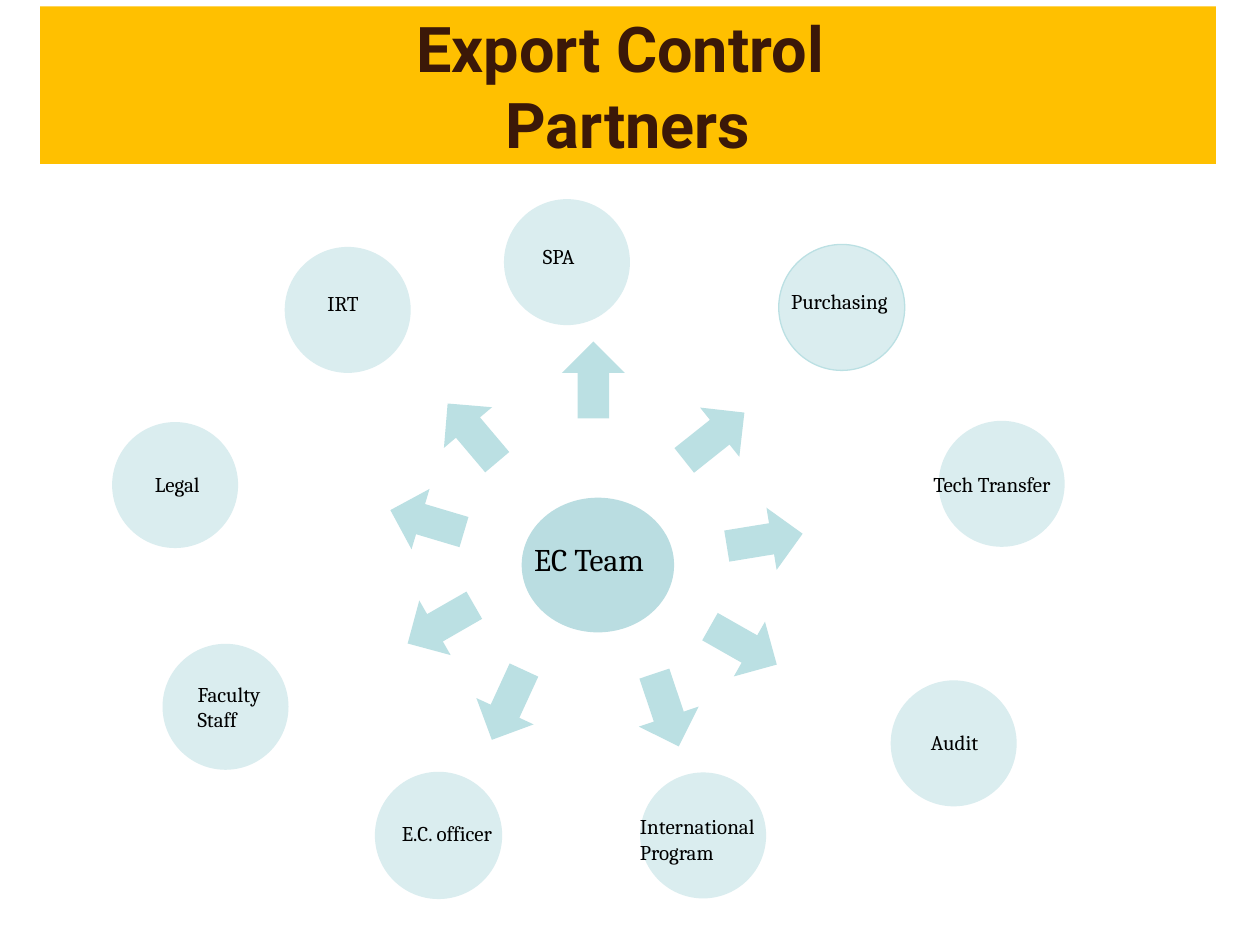
from dataclasses import dataclass

from pptx import Presentation
from pptx.dml.color import RGBColor
from pptx.enum.shapes import MSO_SHAPE
from pptx.enum.text import MSO_ANCHOR, MSO_AUTO_SIZE, PP_ALIGN
from pptx.shapes.autoshape import Shape
from pptx.slide import Slide
from pptx.util import Pt

RECTANGLE = MSO_SHAPE.RECTANGLE
ELLIPSE = MSO_SHAPE.OVAL
UP_ARROW = MSO_SHAPE.UP_ARROW
MIDDLE = MSO_ANCHOR.MIDDLE
CENTER = PP_ALIGN.CENTER
GROW_SHAPE = MSO_AUTO_SIZE.SHAPE_TO_FIT_TEXT

GOLD = "FFC000"
BROWN = "3B1808"
BLACK = "000000"
PALE_TEAL = "DAEDEF"
TEAL = "BBE0E3"
TEAM_TEAL = "BADDE1"

PARTNER_SIZE = 72
ARROW_WIDTH = 36
ARROW_HEIGHT = 43.9


@dataclass
class Box:
    left: float
    top: float
    width: float
    height: float


@dataclass
class Label:
    text: str
    box: Box
    size: float = 12


@dataclass
class Partner:
    left: float
    top: float
    label: Label
    line: str | None = None


@dataclass
class Arrow:
    left: float
    top: float
    rotation: float


PARTNERS = [
    Partner(288, 113.8, Label("SPA", Box(303.1, 135.4, 61.9, 21.6))),
    Partner(445, 139.7, Label("Purchasing", Box(445, 161.3, 86.4, 21.6)), TEAL),
    Partner(536.4, 240.5, Label("Tech Transfer", Box(526.3, 265.7, 110.2, 21.6))),
    Partner(509, 388.8, Label("Audit", Box(524.9, 413.3, 54.7, 21.6))),
    Partner(365.8, 441.4, Label("International\nProgram", Box(358.6, 461.5, 92.2, 51.1))),
    Partner(214.6, 441.4, Label("E.C. officer", Box(222.5, 465.1, 92.2, 21.6)), PALE_TEAL),
    Partner(92.9, 367.9, Label("Faculty\nStaff", Box(105.8, 385.9, 92.2, 36))),
    Partner(64.1, 241.2, Label("Legal", Box(81.4, 265.7, 61.9, 21.6))),
    Partner(162.7, 141.1, Label("IRT", Box(180, 162.7, 49.7, 21.6))),
]

ARROWS = [
    Arrow(321.1, 195.1, 0),
    Arrow(390.2, 227.5, 51.5),
    Arrow(419, 286.6, 80.7),
    Arrow(406.8, 347, 119.6),
    Arrow(362.9, 383.8, 161.5),
    Arrow(272.2, 380.9, 204.7),
    Arrow(234, 334.8, 240.1),
    Arrow(226.1, 275.8, 286.6),
    Arrow(252, 225.4, 319.8),
]


def color(hex_value: str) -> RGBColor:
    return RGBColor.from_string(hex_value)


def add_filled_shape(
    slide: Slide, kind: MSO_SHAPE, box: Box, fill: str, line: str | None = None
) -> Shape:
    shape = slide.shapes.add_shape(
        kind, Pt(box.left), Pt(box.top), Pt(box.width), Pt(box.height)
    )
    shape.shadow.inherit = False
    shape.fill.solid()
    shape.fill.fore_color.rgb = color(fill)
    if line:
        shape.line.color.rgb = color(line)
        shape.line.width = Pt(0.75)
    else:
        shape.line.fill.background()
    return shape


def add_title(slide: Slide, text: str) -> None:
    shape = add_filled_shape(slide, RECTANGLE, Box(23, 3.6, 671.8, 90), GOLD)
    frame = shape.text_frame
    frame.margin_left = frame.margin_right = Pt(0)
    frame.margin_top = frame.margin_bottom = Pt(0)
    frame.vertical_anchor = MIDDLE
    paragraph = frame.paragraphs[0]
    paragraph.text = text
    paragraph.alignment = CENTER
    paragraph.font.name = "Roboto"
    paragraph.font.size = Pt(36)
    paragraph.font.bold = True
    paragraph.font.color.rgb = color(BROWN)


def add_label(slide: Slide, label: Label) -> None:
    box = label.box
    text_box = slide.shapes.add_textbox(
        Pt(box.left), Pt(box.top), Pt(box.width), Pt(box.height)
    )
    frame = text_box.text_frame
    frame.word_wrap = True
    frame.auto_size = GROW_SHAPE
    frame.text = label.text
    for paragraph in frame.paragraphs:
        paragraph.font.name = "Cambria"
        paragraph.font.size = Pt(label.size)
        paragraph.font.color.rgb = color(BLACK)


def add_partner(slide: Slide, partner: Partner) -> None:
    box = Box(partner.left, partner.top, PARTNER_SIZE, PARTNER_SIZE)
    add_filled_shape(slide, ELLIPSE, box, PALE_TEAL, partner.line)
    add_label(slide, partner.label)


def add_arrow(slide: Slide, arrow: Arrow) -> None:
    box = Box(arrow.left, arrow.top, ARROW_WIDTH, ARROW_HEIGHT)
    shape = add_filled_shape(slide, UP_ARROW, box, TEAL)
    shape.rotation = arrow.rotation


def main() -> None:
    presentation = Presentation()
    presentation.slide_width = Pt(720)
    presentation.slide_height = Pt(540)
    slide = presentation.slides.add_slide(presentation.slide_layouts[6])

    add_title(slide, "Export Control \vPartners")
    for partner in PARTNERS:
        add_partner(slide, partner)
    add_filled_shape(slide, ELLIPSE, Box(298.1, 284.4, 87.1, 77), TEAM_TEAL)
    add_label(slide, Label("EC Team", Box(298.1, 305.3, 92.2, 28.8), 18))
    for arrow in ARROWS:
        add_arrow(slide, arrow)

    presentation.save("out.pptx")


if __name__ == "__main__":
    main()
